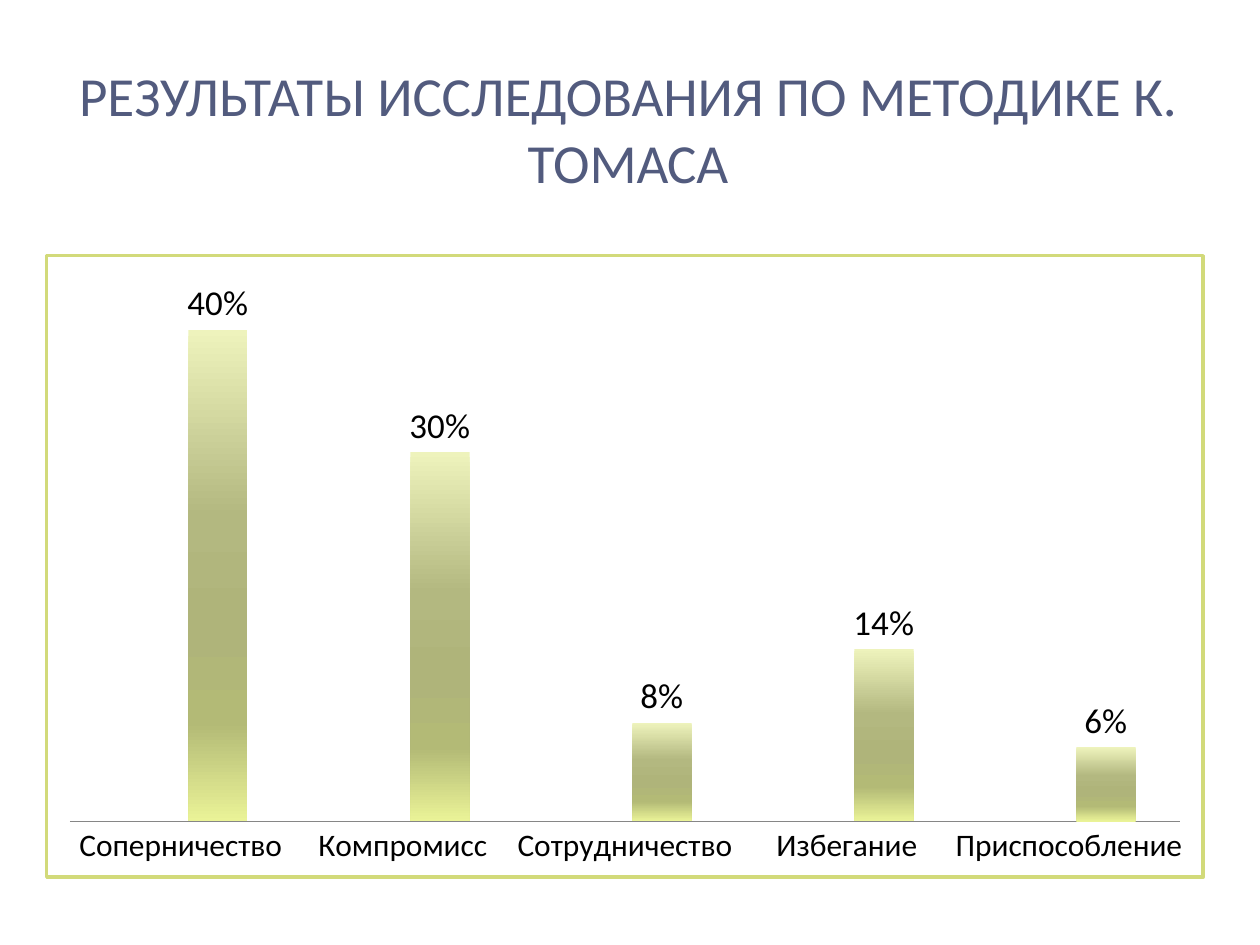
from copy import deepcopy
from dataclasses import dataclass

from lxml import etree
from pptx import Presentation
from pptx.chart.data import CategoryChartData
from pptx.dml.color import RGBColor as RGB
from pptx.enum.chart import XL_CHART_TYPE as ChartType
from pptx.enum.chart import XL_LABEL_POSITION as LabelPosition
from pptx.enum.chart import XL_TICK_MARK as TickMark
from pptx.enum.shapes import MSO_SHAPE as Shape
from pptx.enum.text import MSO_ANCHOR as Anchor
from pptx.enum.text import PP_ALIGN as Align
from pptx.oxml import parse_xml
from pptx.oxml.ns import nsdecls, qn
from pptx.util import Emu, Pt


@dataclass(frozen=True)
class Theme:
    font: str = "Calibri"
    heading: str = "525B7E"
    text: str = "000000"
    background: str = "FFFFFF"
    border: str = "D2DA7A"
    axis: str = "868686"
    empty_series: str = "727CA3"
    bar_stops: tuple = ((0, "EEF3BC"), (38, "B3B880"), (60, "AFB47A"),
                        (80, "B3BA76"), (100, "EAF397"))
    title_size: float = 31.5
    base_size: int = 10
    category_size: int = 18
    label_size: int = 20


def px(length):
    return Emu(round(length * 914400 / 126))


theme = Theme()
prs = Presentation()
prs.slide_width, prs.slide_height = px(1260), px(945)
slide = prs.slides.add_slide(prs.slide_layouts[5])
slide.background.fill.solid()
slide.background.fill.fore_color.rgb = RGB.from_string(theme.background)

for box, opacity in (((38, 38, 1184, 183), 83), ((52, 52, 1155, 154), 100)):
    banner = slide.shapes.add_shape(Shape.RECTANGLE, *map(px, box))
    banner.shadow.inherit = False
    banner.line.fill.background()
    banner.fill.solid()
    banner.fill.fore_color.rgb = RGB.from_string(theme.background)
    if opacity < 100:
        tint = banner._element.spPr.find(".//" + qn("a:srgbClr"))
        etree.SubElement(tint, qn("a:alpha")).set("val", str(opacity * 1000))

title = slide.shapes.title
slide.shapes._spTree.append(title._element)
title.left, title.top, title.width, title.height = px(59), px(56), px(1138), px(144)
title.text_frame.text = "РЕЗУЛЬТАТЫ ИССЛЕДОВАНИЯ ПО МЕТОДИКЕ К. ТОМАСА"
title.text_frame.word_wrap = True
title.text_frame.vertical_anchor = Anchor.MIDDLE
heading = title.text_frame.paragraphs[0]
heading.alignment = Align.CENTER
heading_font = heading.runs[0].font
heading_font.name = theme.font
heading_font.size = Pt(theme.title_size)
heading_font.color.rgb = RGB.from_string(theme.heading)

results = CategoryChartData(number_format="0%")
results.categories = ["Соперничество", "Компромисс", "Сотрудничество",
                      "Избегание", "Приспособление"]
results.add_series("Series 1", [None] * 5)
results.add_series("Series 2", [0.4, 0.3, 0.08, 0.14, 0.06])
chart = slide.shapes.add_chart(
    ChartType.COLUMN_CLUSTERED, px(45), px(254), px(1160), px(625), results).chart
chart.has_title = False
chart.has_legend = False
chart.font.name = theme.font
chart.font.size = Pt(theme.base_size)
chart.font.color.rgb = RGB.from_string(theme.text)

strategies = chart.category_axis
strategies.major_tick_mark = TickMark.NONE
strategies.tick_labels.font.size = Pt(theme.category_size)
strategies.format.line.color.rgb = RGB.from_string(theme.axis)
strategies.format.line.width = Pt(0.25)

shares = chart.value_axis
shares.minimum_scale, shares.maximum_scale = 0, 0.45
shares.has_major_gridlines = False
shares.visible = False

plot = chart.plots[0]
plot.gap_width, plot.overlap = 150, -25
plot.vary_by_categories = False
empty_series, share_series = plot.series
empty_series.format.fill.solid()
empty_series.format.fill.fore_color.rgb = RGB.from_string(theme.empty_series)

bar_fill = share_series.format.fill
bar_fill.gradient()
bar_fill.gradient_angle = 270
stop_list = share_series.format._element.find(".//" + qn("a:gsLst"))
while len(stop_list) < len(theme.bar_stops):
    stop_list.append(deepcopy(stop_list[0]))
for stop, (position, color) in zip(bar_fill.gradient_stops, theme.bar_stops):
    stop.position = position / 100
    stop.color.rgb = RGB.from_string(color)

for series in plot.series:
    series.invert_if_negative = False
    labels = series.data_labels
    labels.show_value = True
    labels.number_format = "0%"
    labels.number_format_is_linked = False
    labels.position = LabelPosition.OUTSIDE_END
    labels.font.size = Pt(theme.label_size)

plot_area = chart._chartSpace.chart.plotArea
for old_layout in plot_area.findall(qn("c:layout")):
    plot_area.remove(old_layout)
layout = parse_xml(f"<c:layout {nsdecls('c')}><c:manualLayout/></c:layout>")
for tag, value in (("layoutTarget", "inner"), ("xMode", "edge"), ("yMode", "edge"),
                   ("x", "0.02"), ("y", "0.02"), ("w", "0.96"), ("h", "0.89")):
    etree.SubElement(layout[0], qn(f"c:{tag}")).set("val", value)
plot_area.insert(0, layout)

chart._chartSpace.chart.addnext(parse_xml(
    f"<c:spPr {nsdecls('c', 'a')}>"
    f'<a:solidFill><a:srgbClr val="{theme.background}"/></a:solidFill>'
    f'<a:ln w="{Pt(2)}"><a:solidFill><a:srgbClr val="{theme.border}"/></a:solidFill></a:ln>'
    "</c:spPr>"))

prs.save("out.pptx")
